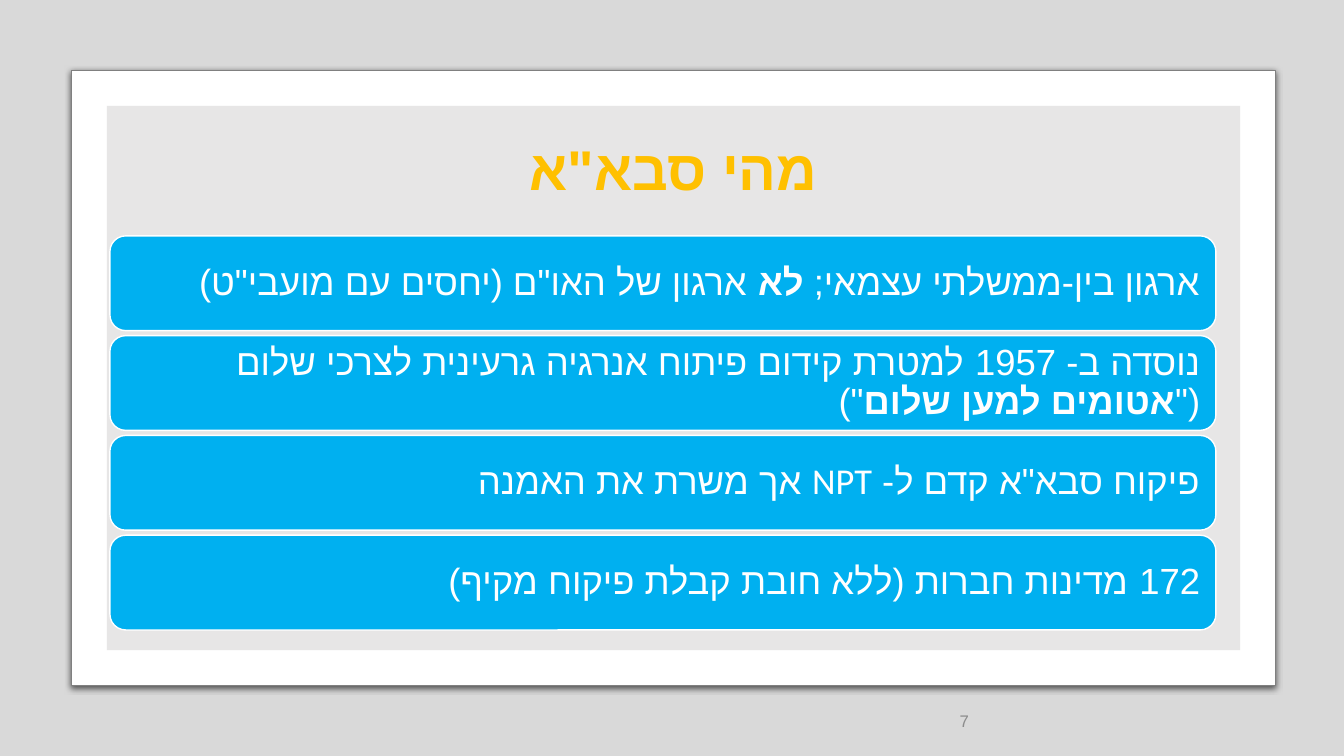
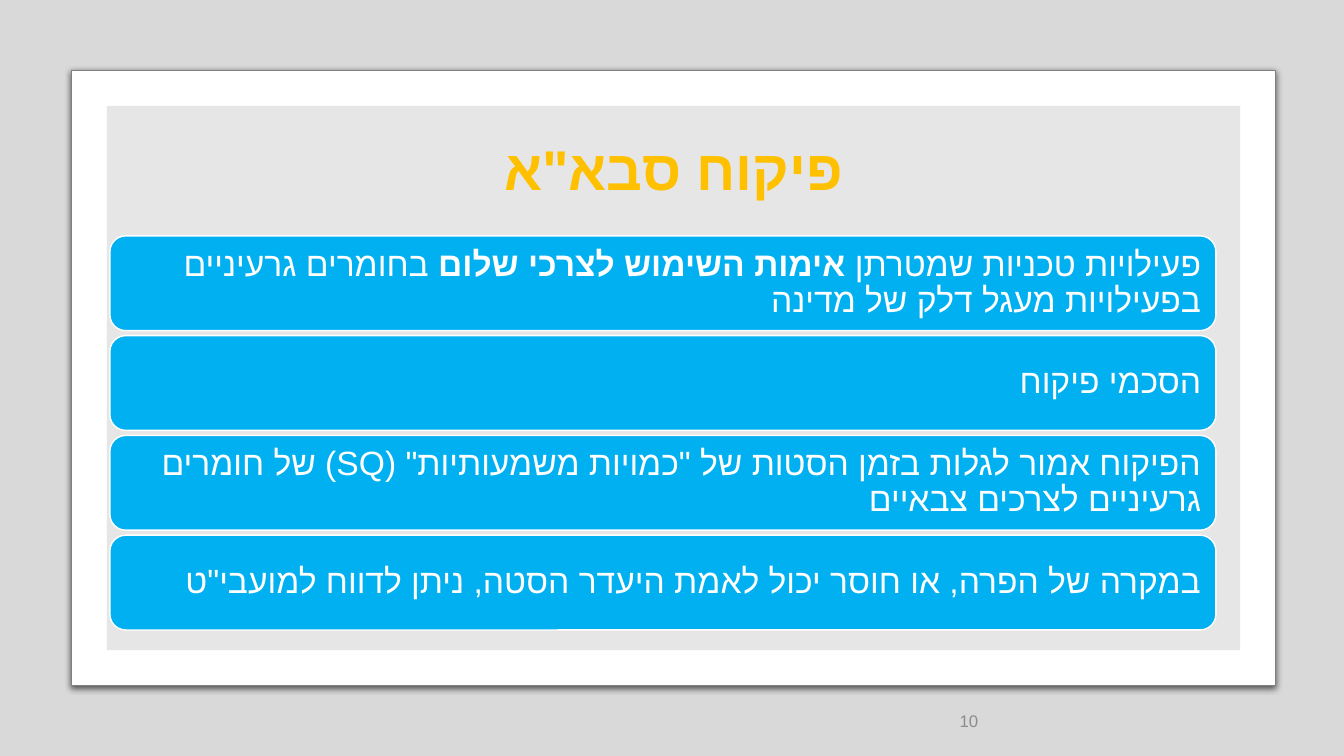
from dataclasses import dataclass

from lxml.etree import SubElement
from pptx import Presentation
from pptx.dml.color import RGBColor
from pptx.enum.shapes import MSO_SHAPE
from pptx.enum.text import MSO_ANCHOR, MSO_AUTO_SIZE, PP_ALIGN
from pptx.oxml import parse_xml
from pptx.oxml.ns import nsdecls, qn
from pptx.util import Inches, Pt


@dataclass(frozen=True)
class Theme:
    backdrop: RGBColor = RGBColor(0xD9, 0xD9, 0xD9)
    white: RGBColor = RGBColor(0xFF, 0xFF, 0xFF)
    frame_line: RGBColor = RGBColor(0x80, 0x80, 0x80)
    panel: RGBColor = RGBColor(0xE7, 0xE6, 0xE6)
    card: RGBColor = RGBColor(0x00, 0xB0, 0xF0)
    title: RGBColor = RGBColor(0xFF, 0xC0, 0x00)
    number: RGBColor = RGBColor(0x8C, 0x8C, 0x8C)
    title_size: int = 40
    number_size: int = 12
    heading_font: str = "Arial"
    body_font: str = "Calibri"
    hebrew_font: str = "Arial"


THEME = Theme()
CARD_TOP, CARD_PITCH = 2.34, 0.99

FRAME_SHADOW = (
    f'<a:effectLst {nsdecls("a")}>'
    '<a:outerShdw blurRad="57150" dist="19050" dir="5400000" algn="ctr" rotWithShape="0">'
    '<a:srgbClr val="000000"><a:alpha val="63000"/></a:srgbClr>'
    '</a:outerShdw></a:effectLst>'
)
TITLE_OUTLINE = (
    f'<a:ln {nsdecls("a")} w="9525"><a:solidFill>'
    f'<a:srgbClr val="{THEME.white}"/></a:solidFill></a:ln>'
)

SLIDES = [
    {
        "number": "7",
        "title": 'מהי סבא"א',
        "font": THEME.body_font,
        "size": 26,
        "inset": 0.11,
        "cards": [
            [("ארגון בין-ממשלתי עצמאי; ", False), ("לא", True),
             (' ארגון של האו"ם (יחסים עם מועבי"ט)', False)],
            [('נוסדה ב- 1957 למטרת קידום פיתוח אנרגיה גרעינית לצרכי שלום ("', False),
             ("אטומים למען שלום", True), ('")', False)],
            [('פיקוח סבא"א קדם ל- NPT אך משרת את האמנה', False)],
            [("172 מדינות חברות (ללא חובת קבלת פיקוח מקיף)", False)],
        ],
    },
    {
        "number": "10",
        "title": 'פיקוח סבא"א',
        "font": THEME.heading_font,
        "size": 24,
        "inset": 0.1,
        "cards": [
            [("פעילויות טכניות שמטרתן ", False), ("אימות השימוש לצרכי שלום ", True),
             ("בחומרים גרעיניים בפעילויות מעגל דלק של מדינה", False)],
            [("הסכמי פיקוח", False)],
            [('הפיקוח אמור לגלות בזמן הסטות של "כמויות משמעותיות" (SQ) '
              "של חומרים גרעיניים לצרכים צבאיים", False)],
            [('במקרה של הפרה, או חוסר יכול לאמת היעדר הסטה, ניתן לדווח למועבי"ט', False)],
        ],
    },
]


def place(shape, left, top, width, height):
    shape.left, shape.top = Inches(left), Inches(top)
    shape.width, shape.height = Inches(width), Inches(height)


def add_box(slide, kind, bounds, fill, line=None, line_width=1):
    shape = slide.shapes.add_shape(kind, *map(Inches, bounds))
    shape.shadow.inherit = False
    shape.fill.solid()
    shape.fill.fore_color.rgb = fill
    if line is None:
        shape.line.fill.background()
    else:
        shape.line.color.rgb = line
        shape.line.width = Pt(line_width)
    return shape


def format_hebrew(paragraph, font_name, size, color, alignment):
    paragraph.alignment = alignment
    paragraph.font.name = font_name
    paragraph.font.size = Pt(size)
    paragraph.font.color.rgb = color
    properties = paragraph._p.get_or_add_pPr()
    properties.set("rtl", "1")
    defaults = properties.find(qn("a:defRPr"))
    SubElement(defaults, qn("a:cs")).set("typeface", THEME.hebrew_font)
    return defaults


def add_frame(slide):
    frame = add_box(slide, MSO_SHAPE.RECTANGLE, (0.71, 0.7, 11.94, 6.1),
                    THEME.white, THEME.frame_line, 0.75)
    properties = frame._element.spPr
    properties.replace(properties.find(qn("a:effectLst")), parse_xml(FRAME_SHADOW))
    add_box(slide, MSO_SHAPE.RECTANGLE, (1.06, 1.05, 11.24, 5.4), THEME.panel)


def set_title(slide, text):
    title = slide.shapes.title
    tree = title._element.getparent()
    tree.append(title._element)
    place(title, 1.41, 1.21, 10.54, 1.01)
    text_frame = title.text_frame
    text_frame.text = text
    text_frame.auto_size = MSO_AUTO_SIZE.NONE
    text_frame.vertical_anchor = MSO_ANCHOR.MIDDLE
    paragraph = text_frame.paragraphs[0]
    paragraph.line_spacing = 0.9
    paragraph.font.bold = True
    defaults = format_hebrew(paragraph, THEME.heading_font, THEME.title_size,
                             THEME.title, PP_ALIGN.CENTER)
    defaults.insert(0, parse_xml(TITLE_OUTLINE))


def add_slide_number(slide, number):
    box = slide.shapes.add_textbox(*map(Inches, (9.42, 6.95, 3, 0.4)))
    text_frame = box.text_frame
    text_frame.word_wrap = True
    text_frame.vertical_anchor = MSO_ANCHOR.MIDDLE
    text_frame.text = number
    format_hebrew(text_frame.paragraphs[0], THEME.body_font, THEME.number_size,
                  THEME.number, PP_ALIGN.LEFT)


def add_card(slide, top, fragments, font_name, size, inset):
    card = add_box(slide, MSO_SHAPE.ROUNDED_RECTANGLE, (1.09, top, 10.97, 0.94),
                   THEME.card, THEME.white)
    text_frame = card.text_frame
    text_frame.word_wrap = True
    text_frame.vertical_anchor = MSO_ANCHOR.MIDDLE
    text_frame.margin_left = text_frame.margin_right = Inches(inset)
    text_frame.margin_top = text_frame.margin_bottom = Inches(inset)
    paragraph = text_frame.paragraphs[0]
    paragraph.line_spacing = 0.9
    format_hebrew(paragraph, font_name, size, THEME.white, PP_ALIGN.RIGHT)
    for text, bold in fragments:
        run = paragraph.add_run()
        run.text = text
        run.font.bold = bold


def build_slide(presentation, content):
    slide = presentation.slides.add_slide(presentation.slide_layouts.get_by_name("Title Only"))
    add_frame(slide)
    set_title(slide, content["title"])
    add_slide_number(slide, content["number"])
    for index, fragments in enumerate(content["cards"]):
        add_card(slide, CARD_TOP + index * CARD_PITCH, fragments,
                 content["font"], content["size"], content["inset"])


def main():
    presentation = Presentation()
    presentation.slide_width, presentation.slide_height = Inches(13.33), Inches(7.5)
    background = presentation.slide_master.background.fill
    background.solid()
    background.fore_color.rgb = THEME.backdrop
    for content in SLIDES:
        build_slide(presentation, content)
    presentation.save("out.pptx")


if __name__ == "__main__":
    main()
